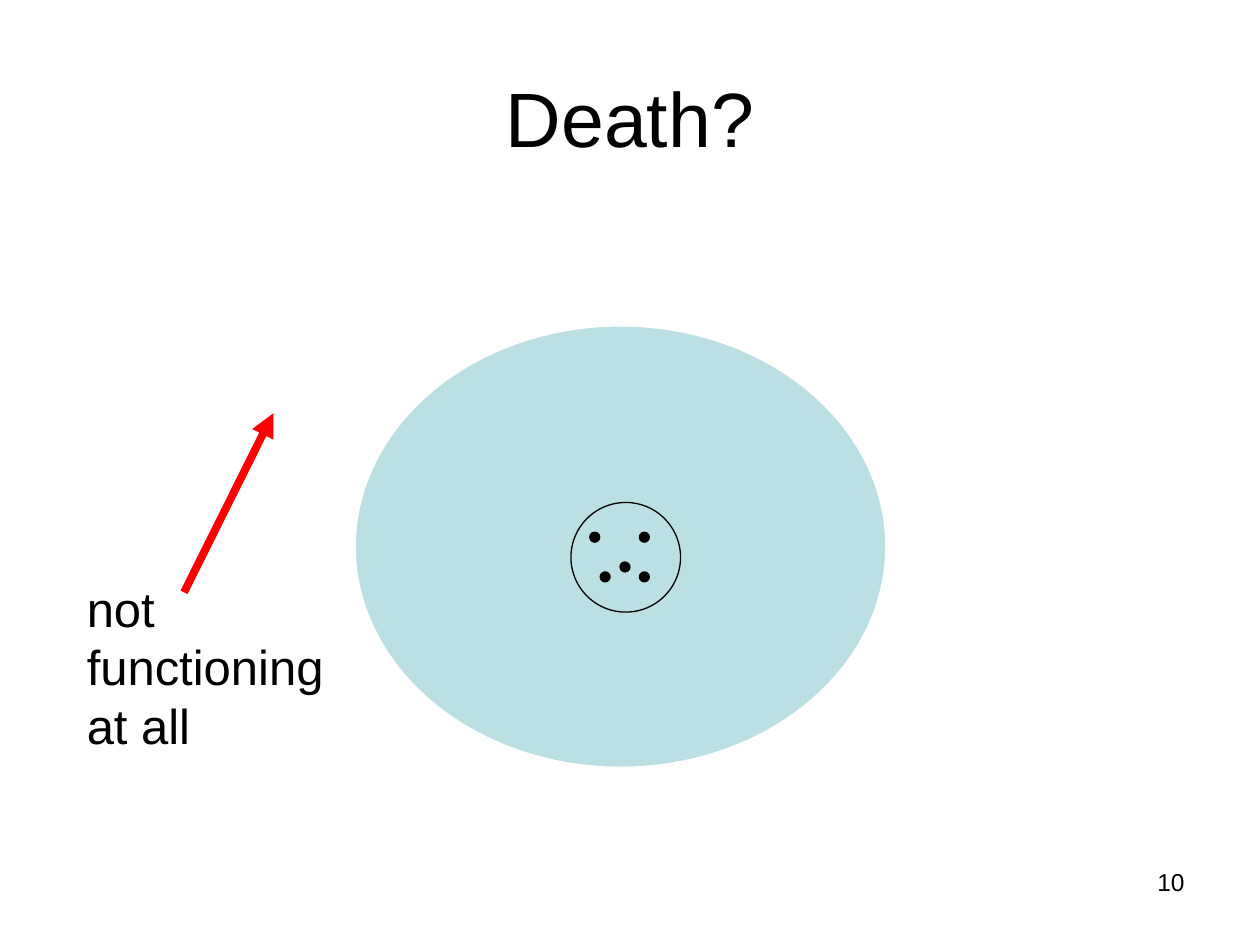
from dataclasses import dataclass

from lxml.etree import SubElement
from pptx import Presentation
from pptx.dml.color import RGBColor
from pptx.enum.shapes import MSO_CONNECTOR as Connector, MSO_SHAPE as Shape
from pptx.enum.text import MSO_ANCHOR as Anchor, PP_ALIGN as Align
from pptx.oxml.ns import qn
from pptx.util import Cm, Pt


@dataclass(frozen=True)
class Theme:
    """Colours, font and type sizes of the slide."""
    ink: RGBColor = RGBColor(0, 0, 0)
    paper: RGBColor = RGBColor(255, 255, 255)
    cell: RGBColor = RGBColor(0xBB, 0xE0, 0xE3)
    pointer: RGBColor = RGBColor(255, 0, 0)
    font: str = "Arial"
    title: Pt = Pt(44)
    label: Pt = Pt(28)
    number: Pt = Pt(14)


THEME = Theme()
PARTICLE_SIZE = 0.2
PARTICLE_CENTRES = [(11.99, 10.83), (12.6, 11.43), (12.99, 10.83),
                    (12.99, 11.63), (12.2, 11.63)]


def add_label(slide, wording, box, size, align=Align.LEFT, anchor=Anchor.TOP):
    """Add one wrapped paragraph in a box given in centimetres."""
    frame = slide.shapes.add_textbox(*map(Cm, box)).text_frame
    frame.word_wrap = True
    frame.vertical_anchor = anchor
    paragraph = frame.paragraphs[0]
    paragraph.text = wording
    paragraph.alignment = align
    paragraph.font.name = THEME.font
    paragraph.font.size = size
    paragraph.font.color.rgb = THEME.ink


def add_ellipse(slide, box, fill, outline=THEME.ink, weight=0.75):
    """Add a filled and outlined ellipse in a box given in centimetres."""
    ellipse = slide.shapes.add_shape(Shape.OVAL, *map(Cm, box))
    ellipse.shadow.inherit = False
    ellipse.fill.solid()
    ellipse.fill.fore_color.rgb = fill
    ellipse.line.color.rgb = outline
    ellipse.line.width = Pt(weight)


def add_arrow(slide, start, end):
    """Add a thick arrow between two points given in centimetres."""
    arrow = slide.shapes.add_connector(Connector.STRAIGHT, *map(Cm, start + end))
    arrow.line.color.rgb = THEME.pointer
    arrow.line.width = Pt(4.5)
    SubElement(arrow.line._get_or_add_ln(), qn("a:tailEnd"), type="triangle")
    SubElement(arrow._element.spPr, qn("a:effectLst"))


def add_cell(slide):
    """Add the cell with its nucleus and the particles inside it."""
    add_ellipse(slide, (6.91, 6.32, 11.2, 9.4), THEME.cell, THEME.paper, 15)
    add_ellipse(slide, (11.51, 10.13, 2.21, 2.21), THEME.cell)
    for x, y in PARTICLE_CENTRES:
        corner = (x - PARTICLE_SIZE / 2, y - PARTICLE_SIZE / 2)
        add_ellipse(slide, corner + (PARTICLE_SIZE, PARTICLE_SIZE), THEME.ink)


def main():
    """Build and save the slide."""
    deck = Presentation()
    deck.slide_width, deck.slide_height = Cm(25.4), Cm(19.05)
    slide = deck.slides.add_slide(deck.slide_layouts[6])
    add_label(slide, "10", (18.21, 17.35, 5.92, 1.32), THEME.number, Align.RIGHT)
    add_label(slide, "Death?", (1.27, 0.76, 22.86, 3.18), THEME.title,
              Align.CENTER, Anchor.MIDDLE)
    add_cell(slide)
    add_arrow(slide, (3.71, 11.94), (5.51, 8.33))
    add_label(slide, "not functioning at all", (1.5, 11.53, 5.41, 3.81), THEME.label)
    deck.save("out.pptx")


if __name__ == "__main__":
    main()
